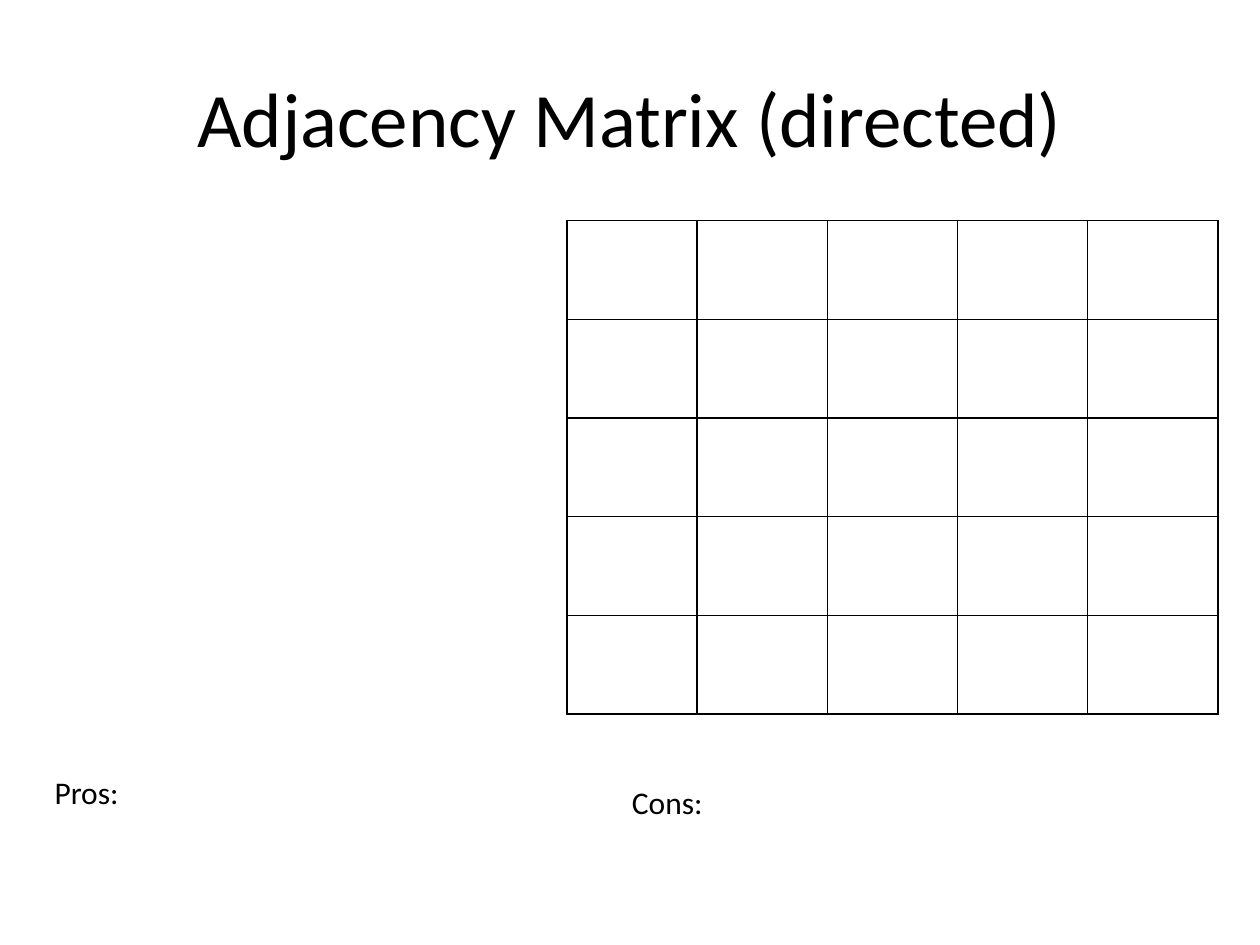
from dataclasses import dataclass

from lxml.etree import SubElement
from pptx import Presentation
from pptx.dml.color import RGBColor as Rgb
from pptx.enum.text import MSO_ANCHOR as Anchor, MSO_AUTO_SIZE as Fit, PP_ALIGN as Align
from pptx.oxml.ns import qn
from pptx.slide import Slide
from pptx.table import _Cell as Cell
from pptx.util import Cm, Pt


@dataclass(frozen=True)
class Theme:
    font: str = "Calibri"
    ink: Rgb = Rgb(0, 0, 0)
    paper: Rgb = Rgb(255, 255, 255)
    head: int = 44
    body: int = 18
    rule: int = 1


@dataclass(frozen=True)
class Label:
    """A line of text; lengths in centimetres."""
    text: str
    left: float
    top: float
    width: float
    height: float
    size: int
    align: Align = Align.LEFT
    anchor: Anchor = Anchor.TOP
    fit: Fit = Fit.SHAPE_TO_FIT_TEXT


@dataclass(frozen=True)
class Grid:
    """A square matrix of empty cells; lengths in centimetres."""
    left: float
    top: float
    width: float
    height: float
    count: int


THEME = Theme()
LABELS = [
    Label("Adjacency Matrix (directed)", 1.27, 0.76, 22.86, 3.18, THEME.head,
          Align.CENTER, Anchor.MIDDLE, Fit.NONE),
    Label("Pros:", 0.85, 15.45, 9.53, 1.03, THEME.body),
    Label("Cons:", 12.49, 15.66, 9.53, 1.03, THEME.body),
]
MATRIX = Grid(11.43, 4.45, 13.12, 9.95, 5)


def add_label(slide: Slide, label: Label) -> None:
    box = slide.shapes.add_textbox(Cm(label.left), Cm(label.top),
                                   Cm(label.width), Cm(label.height))
    frame = box.text_frame
    frame.word_wrap = True
    frame.auto_size = label.fit
    frame.vertical_anchor = label.anchor
    para = frame.paragraphs[0]
    para.alignment = label.align
    run = para.add_run()
    run.text = label.text
    run.font.name = THEME.font
    run.font.size = Pt(label.size)
    run.font.color.rgb = THEME.ink


def style_cell(cell: Cell) -> None:
    props = cell._tc.get_or_add_tcPr()
    for side in ("lnL", "lnR", "lnT", "lnB"):
        line = SubElement(props, qn(f"a:{side}"), w=str(Pt(THEME.rule)))
        fill = SubElement(line, qn("a:solidFill"))
        SubElement(fill, qn("a:srgbClr"), val=str(THEME.ink))
    cell.fill.solid()
    cell.fill.fore_color.rgb = THEME.paper


def add_grid(slide: Slide, grid: Grid) -> None:
    table = slide.shapes.add_table(grid.count, grid.count, Cm(grid.left), Cm(grid.top),
                                   Cm(grid.width), Cm(grid.height)).table
    table.first_row = table.horz_banding = False
    for cell in table.iter_cells():
        style_cell(cell)


def main() -> None:
    deck = Presentation()
    deck.slide_width, deck.slide_height = Cm(25.4), Cm(19.05)
    slide = deck.slides.add_slide(deck.slide_layouts[6])
    title, *notes = LABELS
    add_label(slide, title)
    add_grid(slide, MATRIX)
    for note in notes:
        add_label(slide, note)
    deck.save("out.pptx")


if __name__ == "__main__":
    main()
